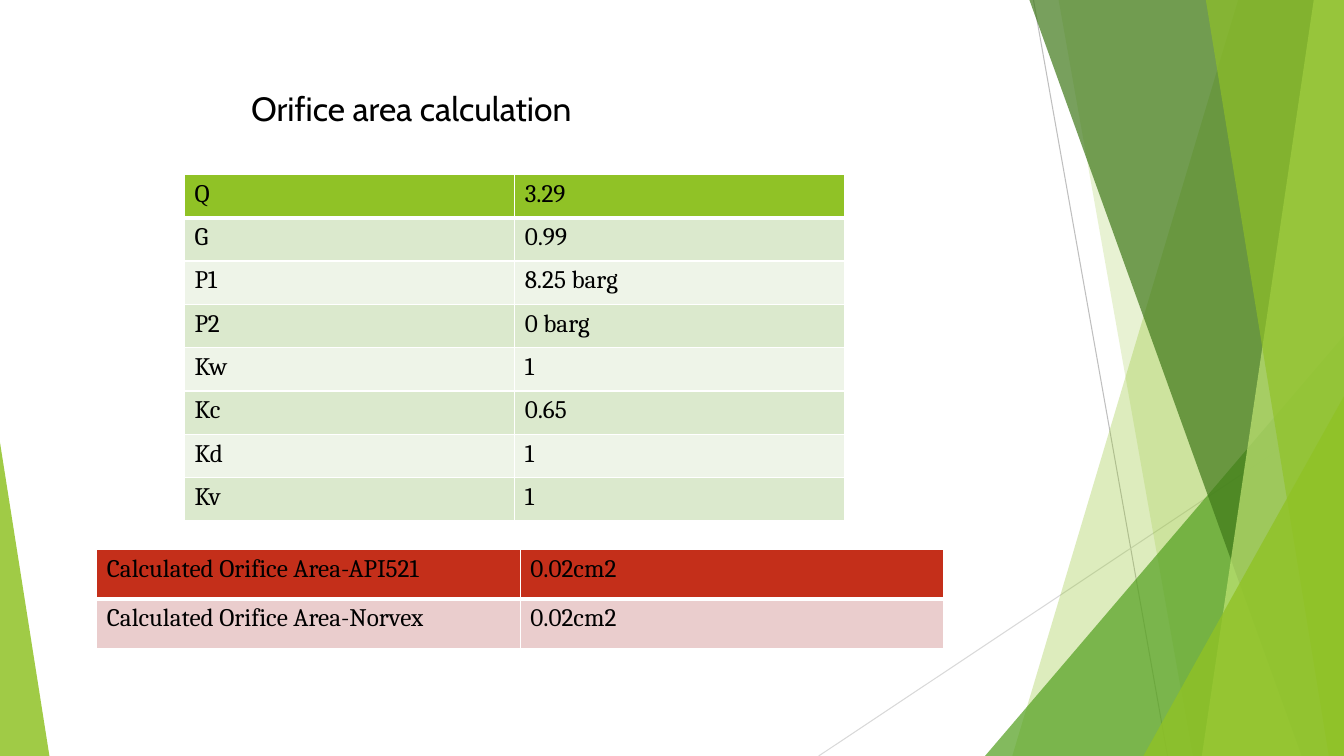
from lxml.etree import SubElement
from pptx import Presentation
from pptx.dml.color import RGBColor
from pptx.enum.shapes import MSO_CONNECTOR, MSO_SHAPE
from pptx.enum.text import MSO_ANCHOR, PP_ALIGN
from pptx.oxml import parse_xml
from pptx.oxml.ns import nsdecls, qn
from pptx.util import Inches, Pt

BLACK = RGBColor(0x00, 0x00, 0x00)
WHITE = RGBColor(0xFF, 0xFF, 0xFF)
GRAY = RGBColor(0xBF, 0xBF, 0xBF)
LIGHT_GRAY = RGBColor(0xD9, 0xD9, 0xD9)
LIME = RGBColor(0x90, 0xC2, 0x26)
PALE_LIME = RGBColor(0xC0, 0xE4, 0x74)
GREEN = RGBColor(0x54, 0xA0, 0x21)
DARK_GREEN = RGBColor(0x3F, 0x78, 0x19)
BAND_GREEN = RGBColor(0xDB, 0xE9, 0xCD)
BAND_PALE = RGBColor(0xEE, 0xF4, 0xE8)
RED = RGBColor(0xC4, 0x2F, 0x1A)
BAND_PINK = RGBColor(0xEA, 0xCD, 0xCD)

WIDTH, HEIGHT = 13.33, 7.5


def write_text(frame, text, font, size, color=BLACK):
    paragraph = frame.paragraphs[0]
    paragraph.alignment = PP_ALIGN.LEFT
    run = paragraph.add_run()
    run.text = text
    run.font.name = font
    run.font.size = Pt(size)
    run.font.bold = False
    run.font.color.rgb = color


def paint(shape, color, opacity):
    """Give a facet a flat fill with an opacity in percent, and no outline."""
    shape.shadow.inherit = False
    shape.line.fill.background()
    shape.fill.solid()
    shape.fill.fore_color.rgb = color
    tint = shape.fill._xPr.find(".//" + qn("a:srgbClr"))
    SubElement(tint, qn("a:alpha"), val=str(opacity * 1000))


presentation = Presentation()
presentation.slide_width = Inches(WIDTH)
presentation.slide_height = Inches(HEIGHT)
slide = presentation.slides.add_slide(presentation.slide_layouts[5])
shapes = slide.shapes

# Thin lines behind the facets
for x1, y1, x2, y2, color in [
    (10.25, 0, 11.58, HEIGHT, GRAY),
    (WIDTH, 4.03, 8.12, HEIGHT, LIGHT_GRAY),
]:
    ray = shapes.add_connector(
        MSO_CONNECTOR.STRAIGHT, Inches(x1), Inches(y1), Inches(x2), Inches(y2)
    )
    ray.line.color.rgb = color
    ray.line.width = Pt(0.75)
    SubElement(ray._element.spPr, qn("a:effectLst"))

# Facets, back to front: a band runs from its top left and bottom left corners
# to the right edge; a triangle has left, top, width, height and apex.
facets = [
    ("band", (12.28, 10.04), LIME, 30),
    ("band", (10.5, 11.83), LIME, 20),
    ("triangle", (9.77, 3.33, 3.56, 4.17, 1), GREEN, 72),
    ("band", (10.21, 12.91), DARK_GREEN, 70),
    ("band", (13.03, 11.92), PALE_LIME, 70),
    ("band", (11.96, 13.18), LIME, 65),
    ("triangle", (11.34, 3.93, 1.99, 3.57, 1), LIME, 80),
    ("triangle", (0, 4.39, 0.49, 3.11, 0), LIME, 85),
]
for kind, geometry, color, opacity in facets:
    if kind == "band":
        top_left, bottom_left = geometry
        outline = shapes.build_freeform(Inches(top_left), 0)
        outline.add_line_segments(
            [
                (Inches(WIDTH), 0),
                (Inches(WIDTH), Inches(HEIGHT)),
                (Inches(bottom_left), Inches(HEIGHT)),
            ]
        )
        facet = outline.convert_to_shape()
    else:
        *box, apex = geometry
        facet = shapes.add_shape(
            MSO_SHAPE.ISOSCELES_TRIANGLE, *[Inches(length) for length in box]
        )
        facet.adjustments[0] = apex
    paint(facet, color, opacity)

title = shapes.title
title.left, title.top = Inches(2.39), Inches(0.77)
title.width, title.height = Inches(5), Inches(0.6)
title.text_frame.vertical_anchor = MSO_ANCHOR.MIDDLE
write_text(title.text_frame, "Orifice area calculation", font="Cabin", size=24)

parameters = [
    ("Q", "3.29"),
    ("G", "0.99"),
    ("P1", "8.25 barg"),
    ("P2", "0 barg"),
    ("Kw", "1"),
    ("Kc", "0.65"),
    ("Kd", "1"),
    ("Kv", "1"),
]
results = [
    ("Calculated Orifice Area-API521", "0.02cm2"),
    ("Calculated Orifice Area-Norvex", "0.02cm2"),
]
for rows, left, top, width, row_height, first_fill, bands in [
    (parameters, 1.83, 1.73, 6.55, 0.43, LIME, (BAND_GREEN, BAND_PALE)),
    (results, 0.96, 5.45, 8.4, 0.49, RED, (BAND_PINK,)),
]:
    table = shapes.add_table(
        len(rows), 2, Inches(left), Inches(top),
        Inches(width), Inches(row_height * len(rows)),
    ).table
    table.first_row = False
    table.horz_banding = False
    for r, row in enumerate(rows):
        table.rows[r].height = Inches(row_height)
        fill = first_fill if r == 0 else bands[(r - 1) % len(bands)]
        # A thick rule parts the first row from the rest
        borders = {"L": 1, "R": 1, "T": 3 if r == 1 else 1, "B": 3 if r == 0 else 1}
        for c, text in enumerate(row):
            cell = table.cell(r, c)
            write_text(cell.text_frame, text, font="Cambria", size=18)
            cell.fill.solid()
            cell.fill.fore_color.rgb = fill
            properties = cell._tc.get_or_add_tcPr()
            for position, (side, points) in enumerate(borders.items()):
                border = parse_xml(
                    f'<a:ln{side} {nsdecls("a")} w="{Pt(points)}"><a:solidFill>'
                    f'<a:srgbClr val="{WHITE}"/></a:solidFill></a:ln{side}>'
                )
                properties.insert(position, border)

presentation.save("out.pptx")
